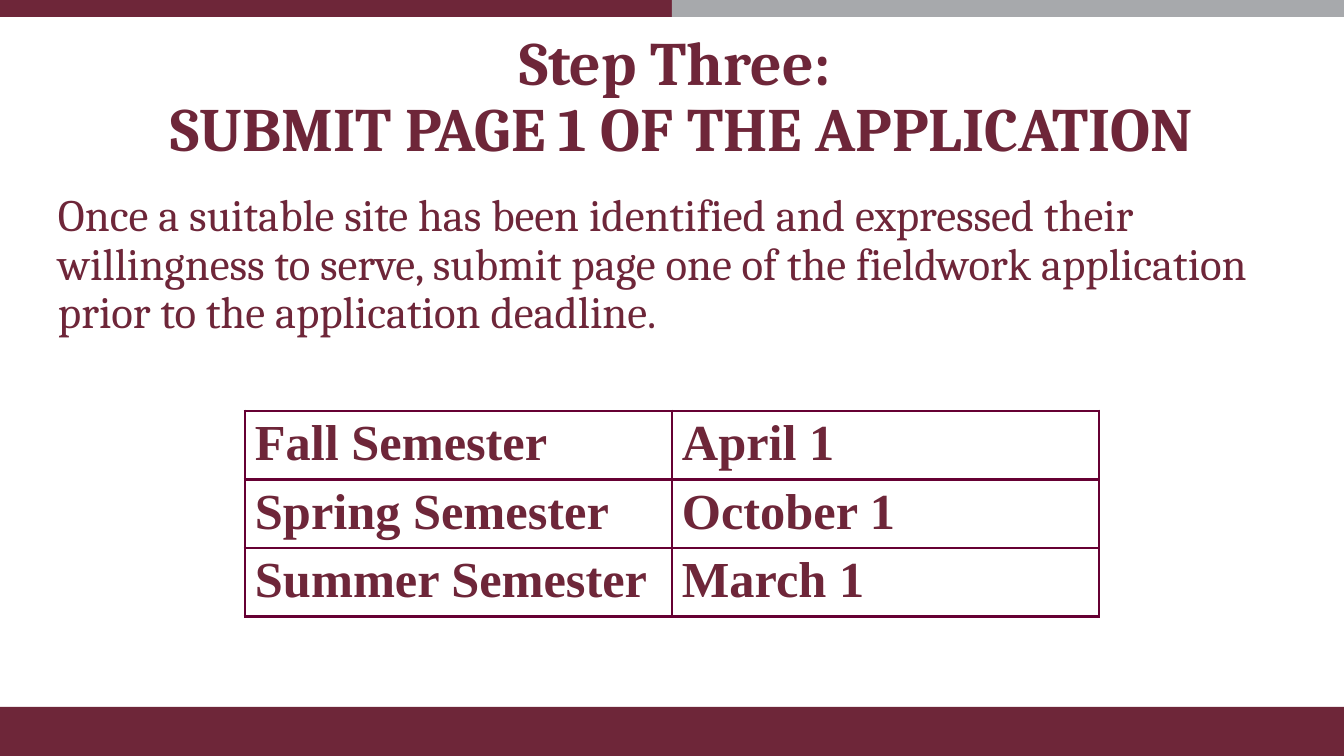
from lxml import etree
from pptx import Presentation
from pptx.dml.color import RGBColor
from pptx.enum.shapes import MSO_SHAPE
from pptx.enum.text import PP_ALIGN
from pptx.oxml.ns import qn
from pptx.util import Pt

PX = 914400 / 100.8
RECT = MSO_SHAPE.RECTANGLE
LEFT, CENTER = PP_ALIGN.LEFT, PP_ALIGN.CENTER
MAROON, GRAY, WHITE, PLUM = "6E2639", "A7A9AC", "FFFFFF", "660033"

# Content
WIDE, HIGH = 1344, 756
TITLE = ["Step Three: ", "SUBMIT PAGE 1 OF THE APPLICATION"]
BODY = ["Once a suitable site has been identified and expressed their "
        "willingness to serve, submit page one of the fieldwork application "
        "prior to the application deadline."]
DATES = [("Fall Semester", "April 1"),
         ("Spring Semester", "October 1"),
         ("Summer Semester", "March 1")]
BARS = [((0, 0, WIDE // 2, 17), MAROON),
        ((WIDE // 2, 0, WIDE // 2, 17), GRAY),
        ((0, 707, WIDE, HIGH - 707), MAROON)]
GRID = (245, 411, 854, 198)


def px(n):
    return round(n * PX)


def color(code):
    return RGBColor.from_string(code)


def style(para, face, size, bold):
    font = para.font
    font.name, font.size, font.bold = face, Pt(size), bold
    font.color.rgb = color(MAROON)


def add_text(slide, box, lines, size, bold, align):
    frame = slide.shapes.add_textbox(*map(px, box)).text_frame
    frame.word_wrap = True
    frame.margin_left = frame.margin_right = 0
    frame.margin_top = frame.margin_bottom = 0
    frame.text = "\n".join(lines)
    for para in frame.paragraphs:
        para.alignment, para.line_spacing = align, 0.9
        style(para, "Cambria", size, bold)


def add_bar(slide, box, fill):
    bar = slide.shapes.add_shape(RECT, *map(px, box))
    bar.shadow.inherit = False
    bar.fill.solid()
    bar.fill.fore_color.rgb = color(fill)
    bar.line.fill.background()


def add_edges(cell):
    props = cell._tc.get_or_add_tcPr()
    for spot, side in enumerate(("lnL", "lnR", "lnT", "lnB")):
        edge = etree.Element(qn("a:" + side), w=str(Pt(2.25)))
        fill = etree.SubElement(edge, qn("a:solidFill"))
        etree.SubElement(fill, qn("a:srgbClr"), val=PLUM)
        props.insert(spot, edge)


def add_dates(slide):
    table = slide.shapes.add_table(len(DATES), 2, *map(px, GRID)).table
    table.first_row = table.horz_banding = False
    for r, row in enumerate(DATES):
        for c, text in enumerate(row):
            cell = table.cell(r, c)
            cell.text = text
            cell.margin_left = cell.margin_right = px(10)
            cell.margin_top, cell.margin_bottom = px(5), px(3)
            cell.fill.solid()
            cell.fill.fore_color.rgb = color(WHITE)
            style(cell.text_frame.paragraphs[0], "Times New Roman", 36, True)
            add_edges(cell)


def main():
    deck = Presentation()
    deck.slide_width, deck.slide_height = px(WIDE), px(HIGH)
    slide = deck.slides.add_slide(deck.slide_layouts[6])

    # Heading, text and deadlines
    add_text(slide, (21, 32, 1322, 134), TITLE, 44, True, CENTER)
    add_text(slide, (58, 193, 1228, 150), BODY, 32, False, LEFT)
    add_dates(slide)

    # Bars along the top and bottom
    for box, fill in BARS:
        add_bar(slide, box, fill)
    deck.save("out.pptx")


if __name__ == "__main__":
    main()
